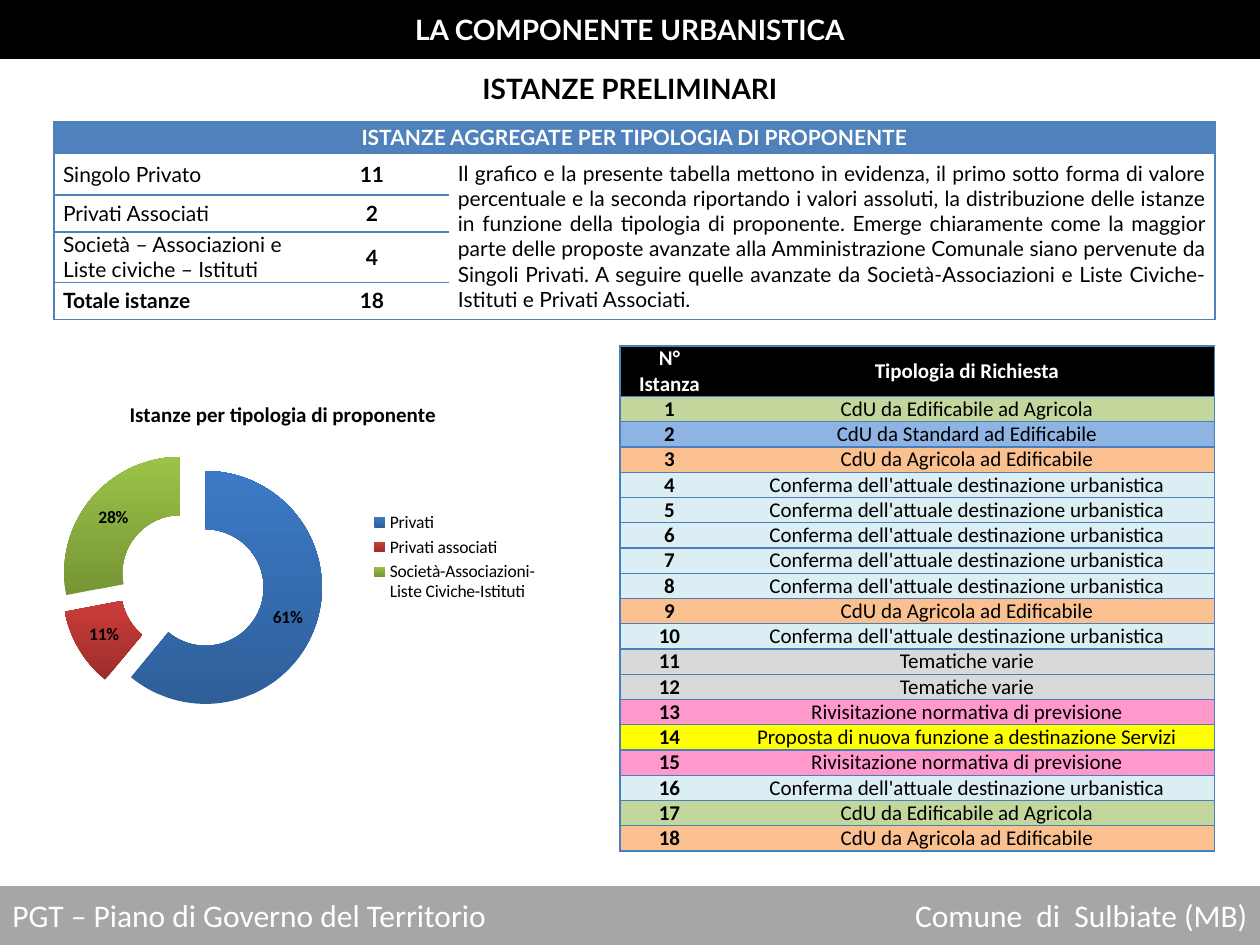
from dataclasses import dataclass

from lxml import etree
from pptx import Presentation
from pptx import util as u
from pptx.chart import data as chart_data
from pptx.dml.color import RGBColor
from pptx.enum import chart as charts, shapes, text
from pptx.oxml import ns, parse_xml

EMU_PER_PX = 914400 / 126
NO_TABLE_STYLE = "{2D5ABB26-0587-4C30-8999-92F81FD0307C}"
LEFT, CENTER = text.PP_ALIGN.LEFT, text.PP_ALIGN.CENTER
RIGHT, JUSTIFY = text.PP_ALIGN.RIGHT, text.PP_ALIGN.JUSTIFY

COLORS = {
    "black": "000000", "white": "FFFFFF", "footer": "A6A6A6",
    "heading": "4F81BD", "grid": "4B7EBC",
    "green": "C3D69B", "blue": "8EB4E3", "orange": "FAC090",
    "pale": "DBEEF4", "gray": "D9D9D9", "pink": "FF99CC", "yellow": "FFFF00",
}


@dataclass
class Box:
    left: int
    top: int
    width: int
    height: int

    def emu(self) -> list[int]:
        return [px(n) for n in (self.left, self.top, self.width, self.height)]


@dataclass
class Style:
    font: str
    size: int
    color: str = "black"
    bold: bool = False
    align: text.PP_ALIGN = CENTER


@dataclass
class Border:
    color: str
    width: float


@dataclass
class Slice:
    label: str
    percent: int
    dark: str
    light: str


@dataclass
class Request:
    label: str
    color: str


def px(length: int) -> int:
    return round(length * EMU_PER_PX)


def rgb(name: str) -> RGBColor:
    return RGBColor.from_string(COLORS[name])


def write(frame, content: str, style: Style) -> None:
    frame.text = content
    paragraph = frame.paragraphs[0]
    paragraph.alignment = style.align
    font = paragraph.font
    font.name, font.size, font.bold = style.font, u.Pt(style.size), style.bold
    font.color.rgb = rgb(style.color)


def add_bar(slide, box: Box, color: str):
    bar = slide.shapes.add_shape(shapes.MSO_SHAPE.RECTANGLE, *box.emu())
    bar.shadow.inherit = False
    bar.fill.solid()
    bar.fill.fore_color.rgb = rgb(color)
    bar.line.fill.background()
    return bar


def add_text(slide, box: Box, content: str, style: Style) -> None:
    frame = slide.shapes.add_textbox(*box.emu()).text_frame
    frame.word_wrap = True
    write(frame, content, style)


def add_table(slide, box: Box, columns: list[int], rows: list[int]):
    table = slide.shapes.add_table(len(rows), len(columns), *box.emu()).table
    table.first_row = table.horz_banding = False
    table._tbl.tblPr.find(ns.qn("a:tableStyleId")).text = NO_TABLE_STYLE
    for column, width in zip(table.columns, columns):
        column.width = px(width)
    for row, height in zip(table.rows, rows):
        row.height = px(height)
    return table


def fill_cell(cell, content: str, style: Style, border: Border, sides: str, fill: str = "") -> None:
    cell.margin_left = cell.margin_right = px(9)
    cell.margin_top = cell.margin_bottom = 0
    cell.vertical_anchor = text.MSO_ANCHOR.MIDDLE
    write(cell.text_frame, content, style)
    properties = cell._tc.get_or_add_tcPr()
    for side in sides:
        line = etree.SubElement(properties, ns.qn(f"a:ln{side}"), w=str(u.Pt(border.width)))
        solid = etree.SubElement(line, ns.qn("a:solidFill"))
        etree.SubElement(solid, ns.qn("a:srgbClr"), val=COLORS[border.color])
    if fill:
        cell.fill.solid()
        cell.fill.fore_color.rgb = rgb(fill)
    else:
        cell.fill.background()


def add_doughnut(slide, box: Box, title: str, slices: list[Slice]) -> None:
    data = chart_data.CategoryChartData()
    data.categories = [part.label for part in slices]
    data.add_series(title, [part.percent for part in slices])
    chart = slide.shapes.add_chart(charts.XL_CHART_TYPE.DOUGHNUT, *box.emu(), data).chart
    chart.font.name, chart.font.size = "Calibri", u.Pt(10)
    chart.font.color.rgb = rgb("black")
    chart.has_title = True
    write(chart.chart_title.text_frame, title, Style("Calibri", 12, bold=True))
    chart.has_legend = True
    chart.legend.position = charts.XL_LEGEND_POSITION.RIGHT
    chart.legend.include_in_layout = False

    plot = chart.plots[0]
    plot.vary_by_categories = True
    plot.has_data_labels = True
    labels = plot.data_labels
    labels.show_percentage, labels.show_value = True, False
    labels.number_format, labels.number_format_is_linked = "0%", False
    labels.font.bold, labels.font.size = True, u.Pt(10)

    series = plot.series[0]
    for index, part in enumerate(slices):
        fill = series.points[index].format.fill
        fill.gradient()
        fill.gradient_angle = 90
        for stop, color in zip(fill.gradient_stops, (part.dark, part.light)):
            stop.color.rgb = RGBColor.from_string(color)
    explosion = parse_xml(f'<c:explosion {ns.nsdecls("c")} val="25"/>')
    series._element.find(ns.qn("c:dPt")).addprevious(explosion)


def main() -> None:
    presentation = Presentation()
    presentation.slide_width, presentation.slide_height = px(1260), px(945)
    slide = presentation.slides.add_slide(presentation.slide_layouts[5])

    # Header and footer
    title = slide.shapes.title
    title.left, title.top, title.width, title.height = Box(0, 6, 1260, 47).emu()
    write(title.text_frame, "LA COMPONENTE URBANISTICA", Style("Lato", 16, "white", True))
    title.element.addprevious(add_bar(slide, Box(0, 0, 1260, 59), "black").element)
    add_bar(slide, Box(0, 886, 1260, 59), "footer")
    add_text(slide, Box(0, 890, 596, 50), "PGT – Piano di Governo del Territorio",
             Style("Calibri", 18, "white", align=LEFT))
    add_text(slide, Box(799, 890, 461, 50), "Comune  di  Sulbiate (MB)",
             Style("Calibri", 18, "white", align=RIGHT))
    add_text(slide, Box(0, 65, 1260, 47), "ISTANZE PRELIMINARI", Style("Lato", 16, bold=True))

    # Totals by kind of applicant
    border = Border("heading", 1)
    totals = add_table(slide, Box(54, 122, 1161, 197), [241, 154, 766], [31, 42, 37, 50, 37])
    totals.cell(0, 0).merge(totals.cell(0, 2))
    totals.cell(1, 2).merge(totals.cell(4, 2))
    fill_cell(totals.cell(0, 0), "ISTANZE AGGREGATE PER TIPOLOGIA DI PROPONENTE",
              Style("Lato", 12, "white", True), border, "LRTB", "heading")
    applicants = [("Singolo Privato", 11), ("Privati Associati", 2),
                  ("Società – Associazioni e Liste civiche – Istituti", 4), ("Totale istanze", 18)]
    for row, (label, count) in enumerate(applicants, 1):
        is_total = row == len(applicants)
        fill_cell(totals.cell(row, 0), label, Style("Lato", 12, bold=is_total, align=LEFT), border, "LTB")
        fill_cell(totals.cell(row, 1), str(count), Style("Lato", 12, bold=True), border, "TB")
    comment = (
        "Il grafico e la presente tabella mettono in evidenza, il primo sotto forma di valore percentuale "
        "e la seconda riportando i valori assoluti, la distribuzione delle istanze in funzione della "
        "tipologia di proponente. Emerge chiaramente come la maggior parte delle proposte avanzate alla "
        "Amministrazione Comunale siano pervenute da Singoli Privati. A seguire quelle avanzate da "
        "Società-Associazioni e Liste Civiche-Istituti e Privati Associati.")
    fill_cell(totals.cell(1, 2), comment, Style("Lato", 12, align=JUSTIFY), border, "RTB")

    # Share of each kind of applicant
    add_doughnut(slide, Box(15, 383, 536, 348), "Istanze per tipologia di proponente", [
        Slice("Privati", 61, "2E5F99", "3C7AC7"),
        Slice("Privati associati", 11, "9B2D2A", "CB3D3A"),
        Slice("Società-Associazioni-Liste Civiche-Istituti", 28, "769535", "9BC348")])

    # List of requests, coloured by type
    to_farm = Request("CdU da Edificabile ad Agricola", "green")
    from_standard = Request("CdU da Standard ad Edificabile", "blue")
    from_farm = Request("CdU da Agricola ad Edificabile", "orange")
    confirm = Request("Conferma dell'attuale destinazione urbanistica", "pale")
    various = Request("Tematiche varie", "gray")
    rules = Request("Rivisitazione normativa di previsione", "pink")
    services = Request("Proposta di nuova funzione a destinazione Servizi", "yellow")
    requests = [to_farm, from_standard, from_farm, *[confirm] * 5, from_farm, confirm, various, various,
                rules, services, rules, confirm, to_farm, from_farm]
    border = Border("grid", 0.75)
    listing = add_table(slide, Box(620, 346, 595, 500), [99, 496], [50] + [25] * len(requests))
    header = Style("Calibri", 12, "white", True)
    fill_cell(listing.cell(0, 0), "N° Istanza", header, border, "LTB", "black")
    fill_cell(listing.cell(0, 1), "Tipologia di Richiesta", header, border, "RTB", "black")
    for number, request in enumerate(requests, 1):
        fill_cell(listing.cell(number, 0), str(number), Style("Calibri", 12, bold=True),
                  border, "LTB", request.color)
        fill_cell(listing.cell(number, 1), request.label, Style("Calibri", 12), border, "RTB", request.color)

    presentation.save("out.pptx")


if __name__ == "__main__":
    main()
